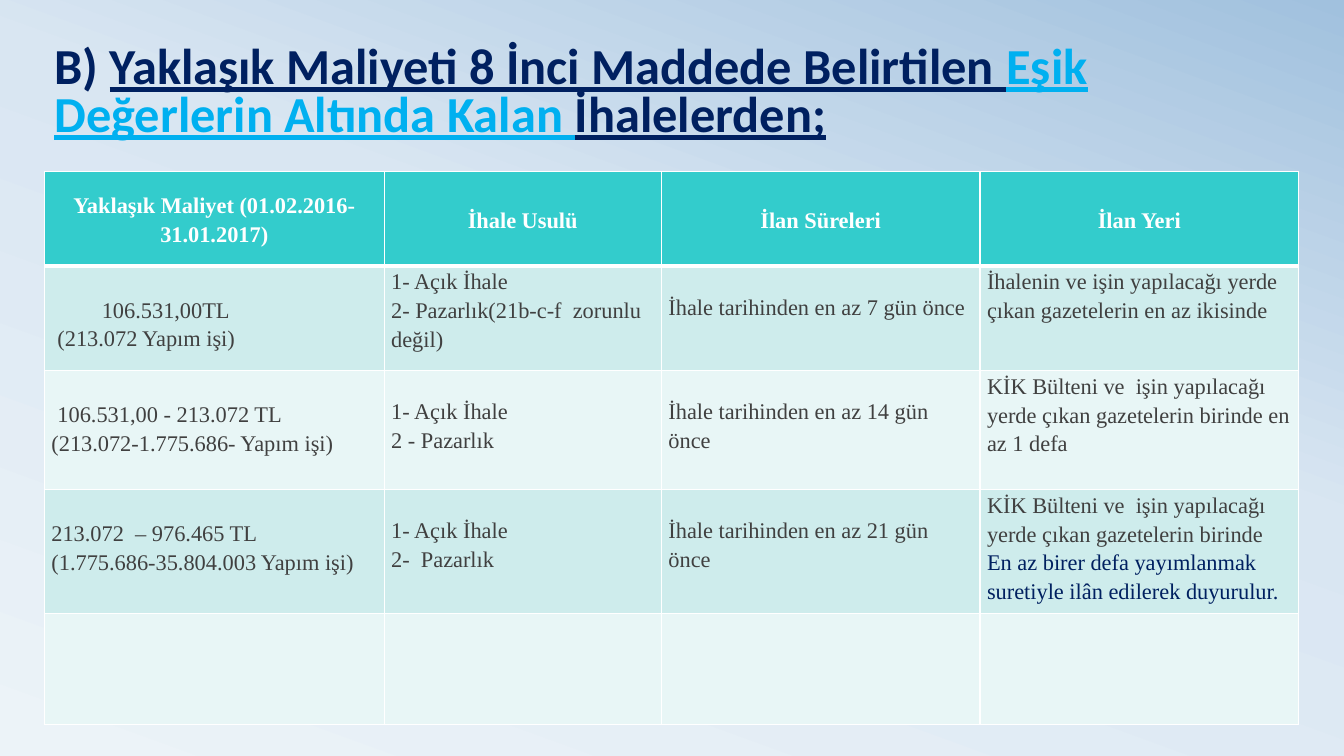
"""Build the slide on tender announcement rules below the threshold values."""
from copy import deepcopy

from lxml import etree
from pptx import Presentation
from pptx.dml.color import RGBColor
from pptx.enum.text import MSO_ANCHOR, PP_ALIGN
from pptx.oxml.ns import qn
from pptx.util import Inches, Pt

LEFT, CENTER = PP_ALIGN.LEFT, PP_ALIGN.CENTER
TOP, MIDDLE, BOTTOM = MSO_ANCHOR.TOP, MSO_ANCHOR.MIDDLE, MSO_ANCHOR.BOTTOM

THEME = {
    "title_font": "Calibri", "table_font": "Times New Roman",
    "title_size": 36, "table_size": 16,
    "navy": "002060", "sky": "00B0F0", "body": "404040", "white": "FFFFFF",
    "header": "33CCCC", "bands": ("CEECEC", "E8F6F6"),
    "background": ((0, "ECF3F8"), (0.58, "D9E6F2"), (1, "A1C1DE")),
}

TITLE = [
    ("B) ", {}),
    ("Yaklaşık Maliyeti 8 İnci Maddede Belirtilen ", {"underline": True}),
    ("Eşik Değerlerin Altında Kalan ", {"underline": True, "color": "sky"}),
    ("İhalelerden;", {"underline": True}),
]
HEADERS = ["Yaklaşık Maliyet (01.02.2016-31.01.2017)", "İhale Usulü", "İlan Süreleri", "İlan Yeri"]
ROWS = [
    [["106.531,00TL", "(213.072 Yapım işi)"],
     ["1- Açık İhale", "2- Pazarlık(21b-c-f  zorunlu değil)"],
     ["İhale tarihinden en az 7 gün önce"],
     ["İhalenin ve işin yapılacağı yerde çıkan gazetelerin en az ikisinde"]],
    [["106.531,00 - 213.072 TL", "(213.072-1.775.686- Yapım işi)"],
     ["1- Açık İhale", "2 - Pazarlık"],
     ["İhale tarihinden en az 14 gün önce"],
     ["KİK Bülteni ve  işin yapılacağı yerde çıkan gazetelerin birinde en az 1 defa"]],
    [["213.072  – 976.465 TL", "(1.775.686-35.804.003 Yapım işi)"],
     ["1- Açık İhale", "2-  Pazarlık"],
     ["İhale tarihinden en az 21 gün önce"],
     [[("KİK Bülteni ve  işin yapılacağı yerde çıkan gazetelerin birinde ", {}),
       ("En az birer defa yayımlanmak suretiyle ilân edilerek duyurulur.", {"color": "navy"})]]],
    [[], [], [], []],
]
COL_WIDTHS = [3.37, 2.75, 3.16, 3.16]
ROW_HEIGHTS = [0.94, 1.04, 1.18, 1.18, 1.1]
TOP_GAPS = [[0.28, 0, 0.25, 0], [0.28, 0.25, 0.25, 0], [0.28, 0.25, 0.25, 0], [0] * 4]
INDENTS = {(0, 0, 0): 0.5, (0, 0, 1): 0.06, (1, 0, 0): 0.06}


def rgb(name):
    return RGBColor.from_string(THEME.get(name, name))


def write(p, text, font="table_font", size="table_size", color="body", bold=False,
          align=LEFT, spacing=1.15, indent=0):
    p.alignment, p.line_spacing = align, spacing
    if indent:
        p._p.get_or_add_pPr().set("marL", str(Inches(indent)))
    for part, changes in [(text, {})] if isinstance(text, str) else text:
        r = p.add_run()
        r.text = part
        r.font.name, r.font.size, r.font.bold = THEME[font], Pt(THEME[size]), bold
        r.font.color.rgb = rgb(changes.get("color", color))
        r.font.underline = changes.get("underline", False)


def set_borders(cell, **widths):
    tc_pr = cell._tc.get_or_add_tcPr()
    for i, side in enumerate("LRTB"):
        ln = etree.Element(qn("a:ln" + side), w=str(Pt(widths.get(side, 1))))
        fill = etree.SubElement(ln, qn("a:solidFill"))
        etree.SubElement(fill, qn("a:srgbClr"), val=THEME["white"])
        tc_pr.insert(i, ln)


def style_cell(cell, fill, anchor=TOP, top_gap=0, **borders):
    cell.fill.solid()
    cell.fill.fore_color.rgb = rgb(fill)
    cell.vertical_anchor = anchor
    cell.margin_left = cell.margin_right = Inches(0.07)
    cell.margin_top, cell.margin_bottom = Inches(top_gap), 0
    set_borders(cell, **borders)


def paint_background(s):
    fill = s.background.fill
    fill.gradient()
    fill.gradient_angle = 70
    stops = s._element.find(".//" + qn("a:gsLst"))
    stops.append(deepcopy(stops[-1]))
    for stop, (position, color) in zip(fill.gradient_stops, THEME["background"]):
        stop.position, stop.color.rgb = position, rgb(color)


def add_title(s):
    tf = s.shapes.add_textbox(Inches(0.44), Inches(0.29), Inches(12.52), Inches(1.17)).text_frame
    tf.word_wrap, tf.vertical_anchor = True, BOTTOM
    write(tf.paragraphs[0], TITLE, font="title_font", size="title_size",
          color="navy", bold=True, spacing=0.8)


def add_rules_table(s):
    table = s.shapes.add_table(len(ROW_HEIGHTS), len(COL_WIDTHS), Inches(0.44), Inches(1.7),
                               Inches(sum(COL_WIDTHS)), Inches(sum(ROW_HEIGHTS))).table
    for column, width in zip(table.columns, COL_WIDTHS):
        column.width = Inches(width)
    for row, height in zip(table.rows, ROW_HEIGHTS):
        row.height = Inches(height)
    for c, header in enumerate(HEADERS):
        cell = table.cell(0, c)
        style_cell(cell, "header", anchor=MIDDLE, B=3)
        write(cell.text_frame.paragraphs[0], header, color="white", bold=True, align=CENTER)
    for r, row in enumerate(ROWS):
        for c, lines in enumerate(row):
            cell = table.cell(r + 1, c)
            style_cell(cell, THEME["bands"][r % 2], top_gap=TOP_GAPS[r][c], T=1 if r else 3)
            tf = cell.text_frame
            for i, line in enumerate(lines):
                p = tf.add_paragraph() if i else tf.paragraphs[0]
                write(p, line, indent=INDENTS.get((r, c, i), 0))


def main():
    prs = Presentation()
    prs.slide_width, prs.slide_height = Inches(13.33), Inches(7.5)
    s = prs.slides.add_slide(prs.slide_layouts[6])
    paint_background(s)
    add_title(s)
    add_rules_table(s)
    prs.save("out.pptx")


if __name__ == "__main__":
    main()
